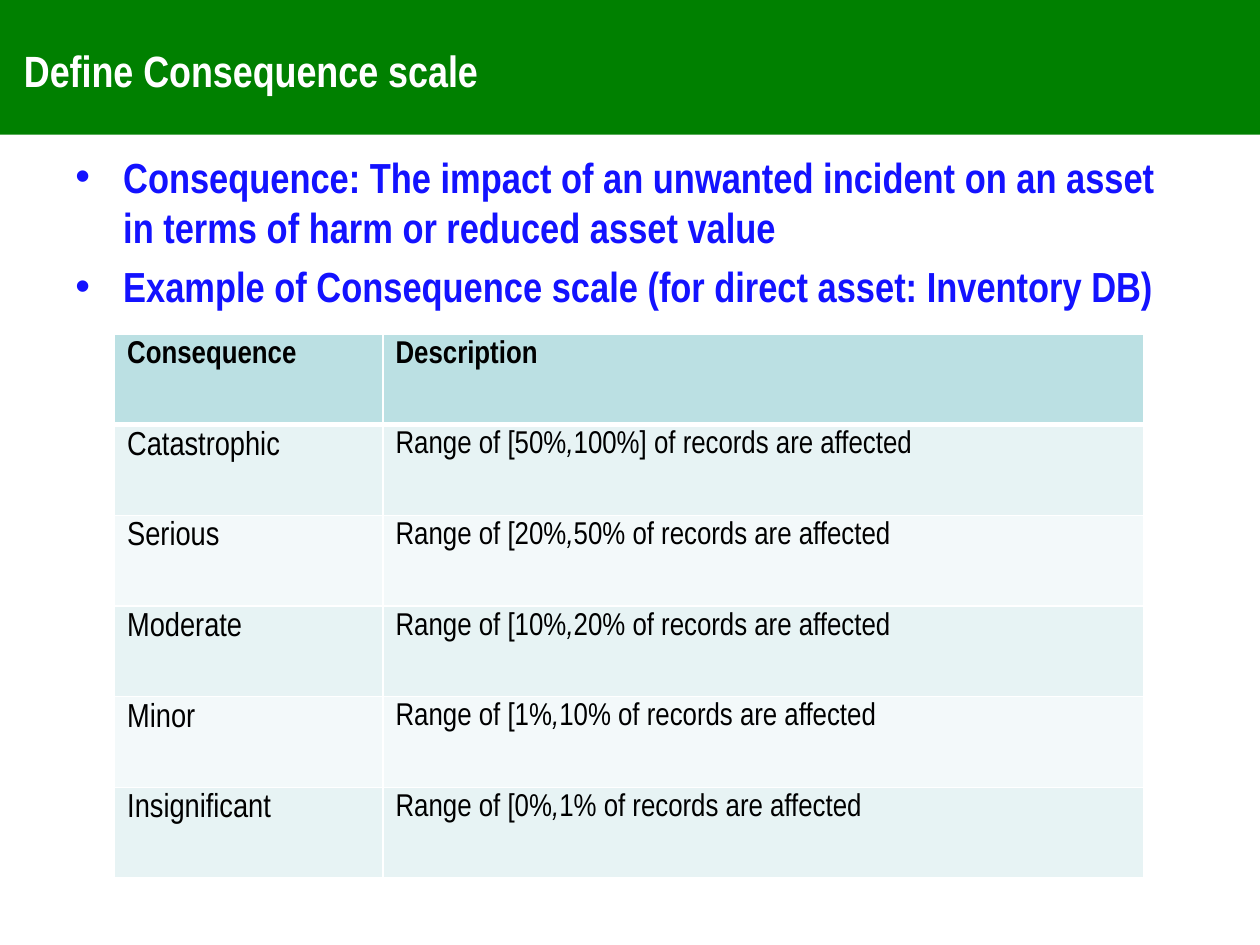
from lxml.etree import SubElement
from pptx import Presentation
from pptx.dml.color import RGBColor
from pptx.enum.shapes import MSO_SHAPE
from pptx.enum.text import MSO_ANCHOR, MSO_AUTO_SIZE, PP_ALIGN
from pptx.oxml.ns import qn
from pptx.util import Inches, Pt

# Content
TITLE = "Define Consequence scale"
BULLETS = [
    "Consequence: The impact of an unwanted incident on an asset in terms of harm or reduced asset value",
    "Example of Consequence scale (for direct asset: Inventory DB)",
]
HEADERS = ["Consequence", "Description"]
SCALE = [  # level, lower bound, upper bound
    ("Catastrophic", "50%", "100%]"),
    ("Serious", "20%", "50%"),
    ("Moderate", "10%", "20%"),
    ("Minor", "1%", "10%"),
    ("Insignificant", "0%", "1%"),
]

FONT = "Arial Narrow"
COLORS = {
    "band": "008000", "title": "FFFFFF", "bullet": "1312FF", "text": "000000",
    "header": "BBE0E3", "odd": "E7F3F4", "even": "F3F9FA", "border": "FFFFFF",
}
COLUMN_WIDTHS = [2.13, 6.04]
ROW_HEIGHT = 0.72


def color(name):
    return RGBColor.from_string(COLORS[name])


def write(paragraph, text, size=18, fill="text", bold=False, italic=False):
    """Add one formatted run to a left-aligned paragraph."""
    paragraph.alignment = PP_ALIGN.LEFT
    run = paragraph.add_run()
    run.text = text
    font = run.font
    font.name, font.size, font.bold, font.italic = FONT, Pt(size), bold, italic
    font.color.rgb = color(fill)


def add_bullet(paragraph):
    properties = paragraph._p.get_or_add_pPr()
    properties.set("marL", str(Inches(0.38)))
    properties.set("indent", str(Inches(-0.38)))
    SubElement(properties, qn("a:buFont"), typeface="Arial")
    SubElement(properties, qn("a:buChar"), char="•")


def format_cell(cell, fill, bottom_width=1, top_width=1):
    cell.margin_left = cell.margin_right = Inches(0.1)
    cell.margin_top = cell.margin_bottom = Inches(0.05)
    cell.vertical_anchor = MSO_ANCHOR.TOP
    properties = cell._tc.get_or_add_tcPr()
    widths = {"a:lnL": 1, "a:lnR": 1, "a:lnT": top_width, "a:lnB": bottom_width}
    for tag, width in widths.items():
        line = SubElement(properties, qn(tag), w=str(Pt(width)))
        solid = SubElement(line, qn("a:solidFill"))
        SubElement(solid, qn("a:srgbClr"), val=COLORS["border"])
    cell.fill.solid()
    cell.fill.fore_color.rgb = color(fill)


presentation = Presentation()
presentation.slide_width, presentation.slide_height = Inches(10), Inches(7.5)
slide = presentation.slides.add_slide(presentation.slide_layouts[5])

# Title band, placed behind the title
band = slide.shapes.add_shape(MSO_SHAPE.RECTANGLE, 0, Inches(-0.03), Inches(10), Inches(1.1))
band.shadow.inherit = False
band.fill.solid()
band.fill.fore_color.rgb = color("band")
band.line.fill.background()
slide.shapes._spTree.insert(2, band._element)

# Title
title = slide.shapes.title
title.left, title.top = Inches(0.09), Inches(0.21)
title.width, title.height = Inches(9), Inches(0.69)
title.text_frame.auto_size = MSO_AUTO_SIZE.NONE
title.text_frame.vertical_anchor = MSO_ANCHOR.MIDDLE
write(title.text_frame.paragraphs[0], TITLE, size=25, fill="title", bold=True)

# Bullets
body = slide.shapes.add_textbox(Inches(0.5), Inches(1.15), Inches(9), Inches(1.4))
frame = body.text_frame
frame.word_wrap = True
for index, text in enumerate(BULLETS):
    paragraph = frame.add_paragraph() if index else frame.paragraphs[0]
    add_bullet(paragraph)
    if index:
        paragraph.space_before = Pt(5)
    write(paragraph, text, size=24, fill="bullet", bold=True)

# Consequence scale table
row_count = len(SCALE) + 1
table = slide.shapes.add_table(
    row_count, len(HEADERS), Inches(0.91), Inches(2.65),
    Inches(sum(COLUMN_WIDTHS)), Inches(ROW_HEIGHT * row_count)).table
for column, width in zip(table.columns, COLUMN_WIDTHS):
    column.width = Inches(width)
for row in table.rows:
    row.height = Inches(ROW_HEIGHT)

for column, text in enumerate(HEADERS):
    cell = table.cell(0, column)
    format_cell(cell, "header", bottom_width=3)
    write(cell.text_frame.paragraphs[0], text, bold=True)

for row, (level, lower, upper) in enumerate(SCALE, start=1):
    level_cell, range_cell = table.cell(row, 0), table.cell(row, 1)
    for cell in (level_cell, range_cell):
        format_cell(cell, "odd" if row % 2 else "even", top_width=3 if row == 1 else 1)
    write(level_cell.text_frame.paragraphs[0], level, size=19)
    paragraph = range_cell.text_frame.paragraphs[0]
    write(paragraph, f"Range of [{lower}")
    write(paragraph, ",", italic=True)
    write(paragraph, f"{upper} of records are affected")

presentation.save("out.pptx")
